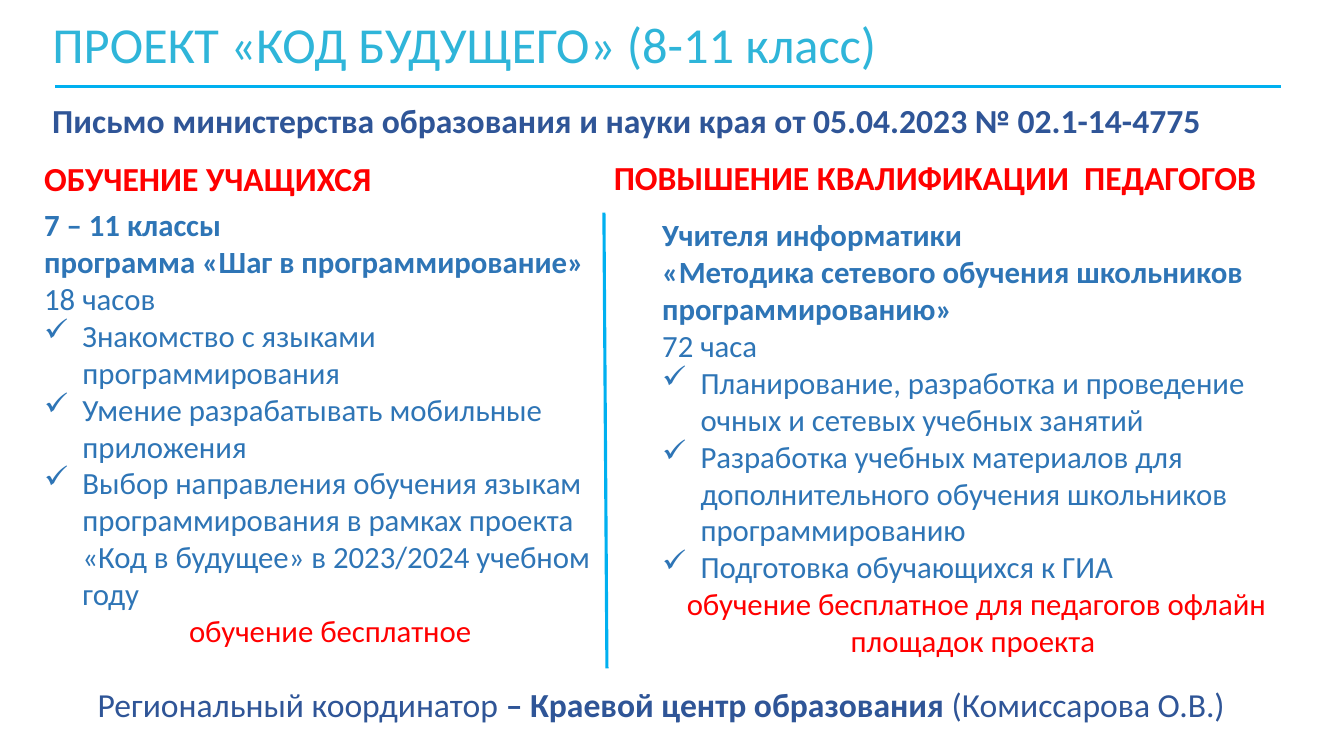
"""Builds the slide about the school coding project with its two training tracks."""
import pptx
import pptx.util
import pptx.dml.color
import pptx.enum.shapes
import pptx.enum.text
import lxml.etree
import pptx.oxml.ns

Inches = pptx.util.Inches
RGBColor = pptx.dml.color.RGBColor
ALIGN = pptx.enum.text.PP_ALIGN
qn = pptx.oxml.ns.qn

TURQUOISE = RGBColor(0x2F, 0xB5, 0xD9)
SKY = RGBColor(0x00, 0xB0, 0xF0)
BLUE = RGBColor(0x2E, 0x75, 0xB6)
NAVY = RGBColor(0x2F, 0x55, 0x97)
RED = RGBColor(0xFF, 0x00, 0x00)


def style_span(span, size, color, bold=False):
    span.font.name = "Calibri"
    span.font.size = pptx.util.Pt(size)
    span.font.color.rgb = color
    span.font.bold = bold


def add_text_box(left, top, width, height):
    box = page.shapes.add_textbox(Inches(left), Inches(top), Inches(width), Inches(height))
    box.text_frame.word_wrap = True
    return box.text_frame


deck = pptx.Presentation()
deck.slide_width = Inches(13.33)
deck.slide_height = Inches(7.5)
page = deck.slides.add_slide(deck.slide_layouts[5])

title = page.shapes.title
title.left, title.top = Inches(0.42), Inches(0.2)
title.width, title.height = Inches(12.9), Inches(0.96)
title.text_frame.text = "ПРОЕКТ «КОД БУДУЩЕГО» (8-11 класс)"
title.text_frame.word_wrap = True
title.text_frame.auto_size = pptx.enum.text.MSO_AUTO_SIZE.NONE
title.text_frame.vertical_anchor = pptx.enum.text.MSO_ANCHOR.TOP
title_para = title.text_frame.paragraphs[0]
title_para.alignment = ALIGN.LEFT
title_para.line_spacing = 0.8
style_span(title_para.runs[0], 36, TURQUOISE)

for x1, y1, x2, y2 in [(0.55, 0.86, 12.71, 0.86), (6.02, 6.63, 5.99, 2.11)]:
    rule = page.shapes.add_connector(
        pptx.enum.shapes.MSO_CONNECTOR.STRAIGHT, Inches(x1), Inches(y1), Inches(x2), Inches(y2))
    rule.line.color.rgb = SKY
    rule.line.width = pptx.util.Pt(2.25)
    lxml.etree.SubElement(rule.element.spPr, qn("a:effectLst"))

headings = [
    (0.42, 0.94, 12.1, NAVY, [
        ("Письмо министерства образования и науки края от 05.04.2023 № 02.1-14-4775", True)]),
    (0.34, 1.52, 6.3, RED, [("ОБУЧЕНИЕ УЧАЩИХСЯ", True)]),
    (5.99, 1.51, 6.73, RED, [("ПОВЫШЕНИЕ КВАЛИФИКАЦИИ  ПЕДАГОГОВ", True)]),
    (0.87, 6.74, 12.1, NAVY, [
        ("Региональный координатор ", False),
        ("– Краевой центр образования ", True),
        ("(Комиссарова О.В.)", False)]),
]
for left, top, width, color, pieces in headings:
    para = add_text_box(left, top, width, 0.5).paragraphs[0]
    for text, bold in pieces:
        span = para.add_run()
        span.text = text
        style_span(span, 24, color, bold)

tracks = [
    (0.34, 1.99, 5.8, [
        ("bold", "7 – 11 классы"),
        ("bold", "программа «Шаг в программирование»"),
        ("plain", "18 часов"),
        ("check", "Знакомство с языками программирования"),
        ("check", "Умение разрабатывать мобильные приложения"),
        ("check", "Выбор направления обучения языкам программирования в рамках проекта "
                  "«Код в будущее» в 2023/2024 учебном году"),
        ("price", " обучение бесплатное")]),
    (6.47, 2.09, 6.36, [
        ("bold", "Учителя информатики"),
        ("bold", "«Методика сетевого обучения школьников программированию»"),
        ("plain", "72 часа"),
        ("check", "Планирование, разработка и проведение очных и сетевых учебных занятий"),
        ("check", "Разработка учебных материалов для дополнительного обучения школьников "
                  "программированию"),
        ("check", "Подготовка обучающихся к ГИА"),
        ("price", " обучение бесплатное для педагогов офлайн площадок проекта")]),
]
for left, top, width, lines in tracks:
    frame = add_text_box(left, top, width, 4.54)
    for index, (kind, text) in enumerate(lines):
        para = frame.add_paragraph() if index else frame.paragraphs[0]
        para.text = text
        style_span(para.runs[0], 22, RED if kind == "price" else BLUE, kind == "bold")
        if kind == "price":
            para.alignment = ALIGN.CENTER
        if kind == "check":
            properties = para._p.get_or_add_pPr()
            properties.set("marL", str(Inches(0.38)))
            properties.set("indent", str(-Inches(0.38)))
            lxml.etree.SubElement(properties, qn("a:buChar"), char="✓")

deck.save("out.pptx")
